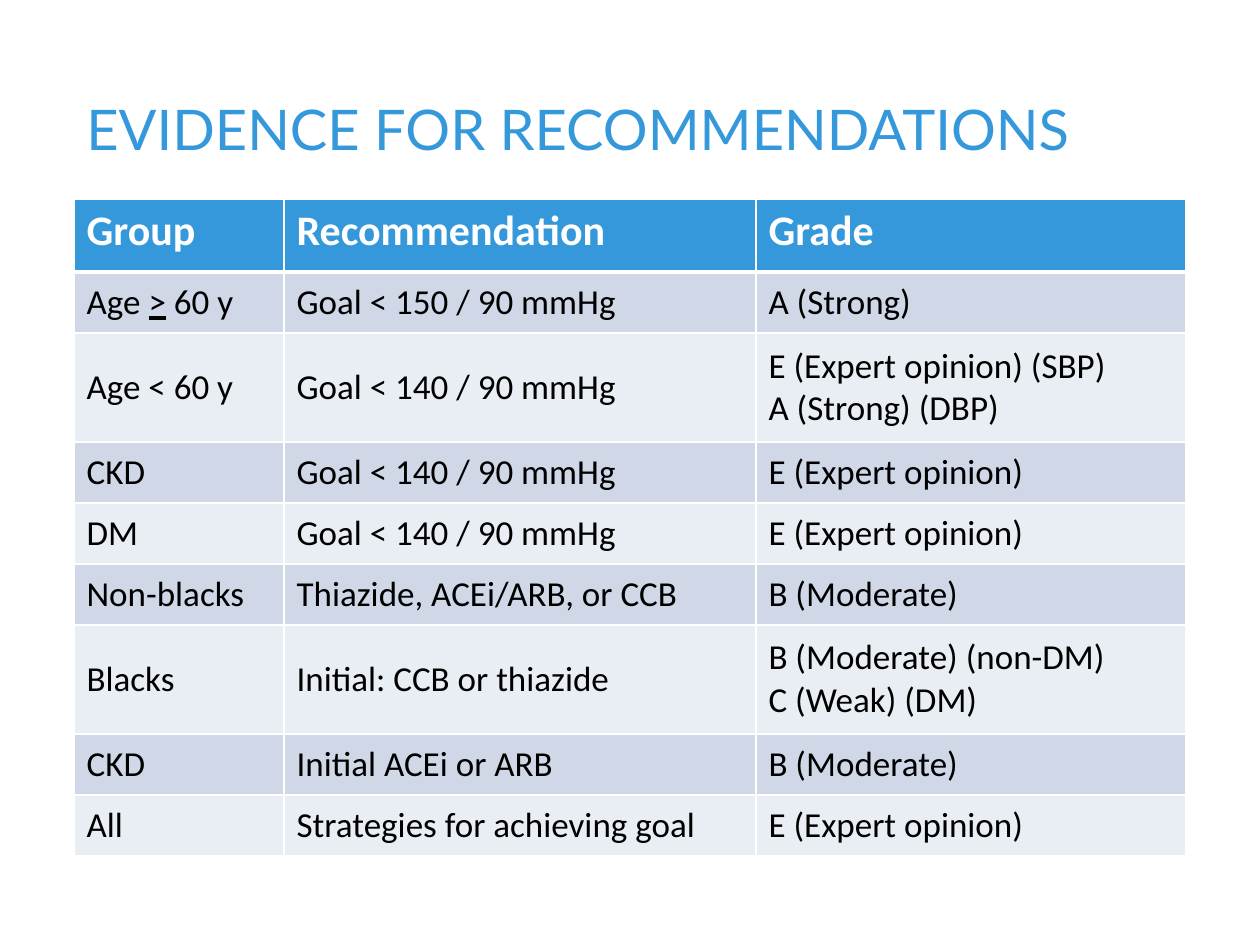
"""Build the slide that grades the evidence for each recommendation."""
from dataclasses import dataclass
from typing import Any

from lxml.etree import SubElement
from pptx import Presentation
from pptx.dml.color import RGBColor
from pptx.enum.text import MSO_ANCHOR
from pptx.oxml.ns import qn
from pptx.util import Emu, Pt


@dataclass(frozen=True)
class Theme:
    blue: str = "3498DB"
    white: str = "FFFFFF"
    black: str = "000000"
    bands: tuple[str, str] = ("D0D8E8", "E9EDF4")
    title: int = 32
    head: int = 24
    body: int = 20
    thin: int = 1
    thick: int = 3


@dataclass(frozen=True)
class Row:
    group: str
    advice: str
    grade: str
    high: int = 61


@dataclass(frozen=True)
class Style:
    name: str
    size: int
    color: str
    bold: bool = False


THEME = Theme()
SCALE = 914400 / 126
WIDE, TALL = 1260, 945
LEFT, SPAN = 74, 1112
COLS = (210, 472, 430)
ROWS = (
    Row("Group", "Recommendation", "Grade", 73),
    Row("Age _>_ 60 y", "Goal < 150 / 90 mmHg", "A (Strong)"),
    Row("Age < 60 y", "Goal < 140 / 90 mmHg", "E (Expert opinion) (SBP)\nA (Strong) (DBP)", 109),
    Row("CKD", "Goal < 140 / 90 mmHg", "E (Expert opinion)"),
    Row("DM", "Goal < 140 / 90 mmHg", "E (Expert opinion)"),
    Row("Non-blacks", "Thiazide, ACEi/ARB, or CCB", "B (Moderate)"),
    Row("Blacks", "Initial: CCB or thiazide", "B (Moderate) (non-DM)\nC (Weak) (DM)", 109),
    Row("CKD", "Initial ACEi or ARB", "B (Moderate)"),
    Row("All", "Strategies for achieving goal", "E (Expert opinion)"),
)
TITLE = Style("Lato", THEME.title, THEME.blue)
HEAD = Style("Calibri", THEME.head, THEME.white, True)
BODY = Style("Calibri", THEME.body, THEME.black)


def px(count: int) -> Emu:
    """Turn whole pixels into EMU."""
    return Emu(round(count * SCALE))


def write(frame: Any, text: str, style: Style) -> None:
    """Write lines of text, underlining what stands between underscores."""
    for at, line in enumerate(text.split("\n")):
        para = frame.add_paragraph() if at else frame.paragraphs[0]
        for part, words in enumerate(line.split("_")):
            run = para.add_run()
            run.text = words
            form = {"name": style.name, "size": Pt(style.size),
                    "bold": style.bold, "underline": part % 2 == 1}
            for key, value in form.items():
                setattr(run.font, key, value)
            run.font.color.rgb = RGBColor.from_string(style.color)


def edge(cell: Any, widths: dict[str, int]) -> None:
    """Draw white borders round a cell, ahead of its fill."""
    props = cell._tc.get_or_add_tcPr()
    for at, (side, width) in enumerate(widths.items()):
        line = SubElement(props, qn(f"a:ln{side}"), w=str(Pt(width)))
        fill = SubElement(line, qn("a:solidFill"))
        SubElement(fill, qn("a:srgbClr"), val=THEME.white)
        props.insert(at, line)


def draw_title(slide: Any, text: str) -> None:
    """Add the slide title, resting on the foot of its box."""
    box = slide.shapes.add_textbox(px(LEFT), px(38), px(SPAN), px(130))
    form = {"word_wrap": True, "vertical_anchor": MSO_ANCHOR.BOTTOM}
    for key, value in form.items():
        setattr(box.text_frame, key, value)
    write(box.text_frame, text, TITLE)


def draw_table(slide: Any, rows: tuple[Row, ...]) -> None:
    """Add the table with a blue head and banded rows."""
    high = sum(row.high for row in rows)
    table = slide.shapes.add_table(
        len(rows), len(COLS), px(LEFT), px(199), px(SPAN), px(high)).table
    for col, width in zip(table.columns, COLS):
        col.width = px(width)
    for at, row in enumerate(rows):
        table.rows[at].height = px(row.high)
        tint = THEME.bands[(at - 1) % 2] if at else THEME.blue
        widths = {"L": THEME.thin, "R": THEME.thin,
                  "T": THEME.thick if at == 1 else THEME.thin,
                  "B": THEME.thin if at else THEME.thick}
        for cell, text in zip(table.rows[at].cells, (row.group, row.advice, row.grade)):
            cell.vertical_anchor = MSO_ANCHOR.MIDDLE if at else MSO_ANCHOR.TOP
            cell.fill.solid()
            cell.fill.fore_color.rgb = RGBColor.from_string(tint)
            edge(cell, widths)
            write(cell.text_frame, text, BODY if at else HEAD)


def main() -> None:
    """Build the deck and save it."""
    deck = Presentation()
    for key, value in {"slide_width": px(WIDE), "slide_height": px(TALL)}.items():
        setattr(deck, key, value)
    slide = deck.slides.add_slide(deck.slide_layouts[6])
    draw_title(slide, "EVIDENCE FOR RECOMMENDATIONS")
    draw_table(slide, ROWS)
    deck.save("out.pptx")


if __name__ == "__main__":
    main()
